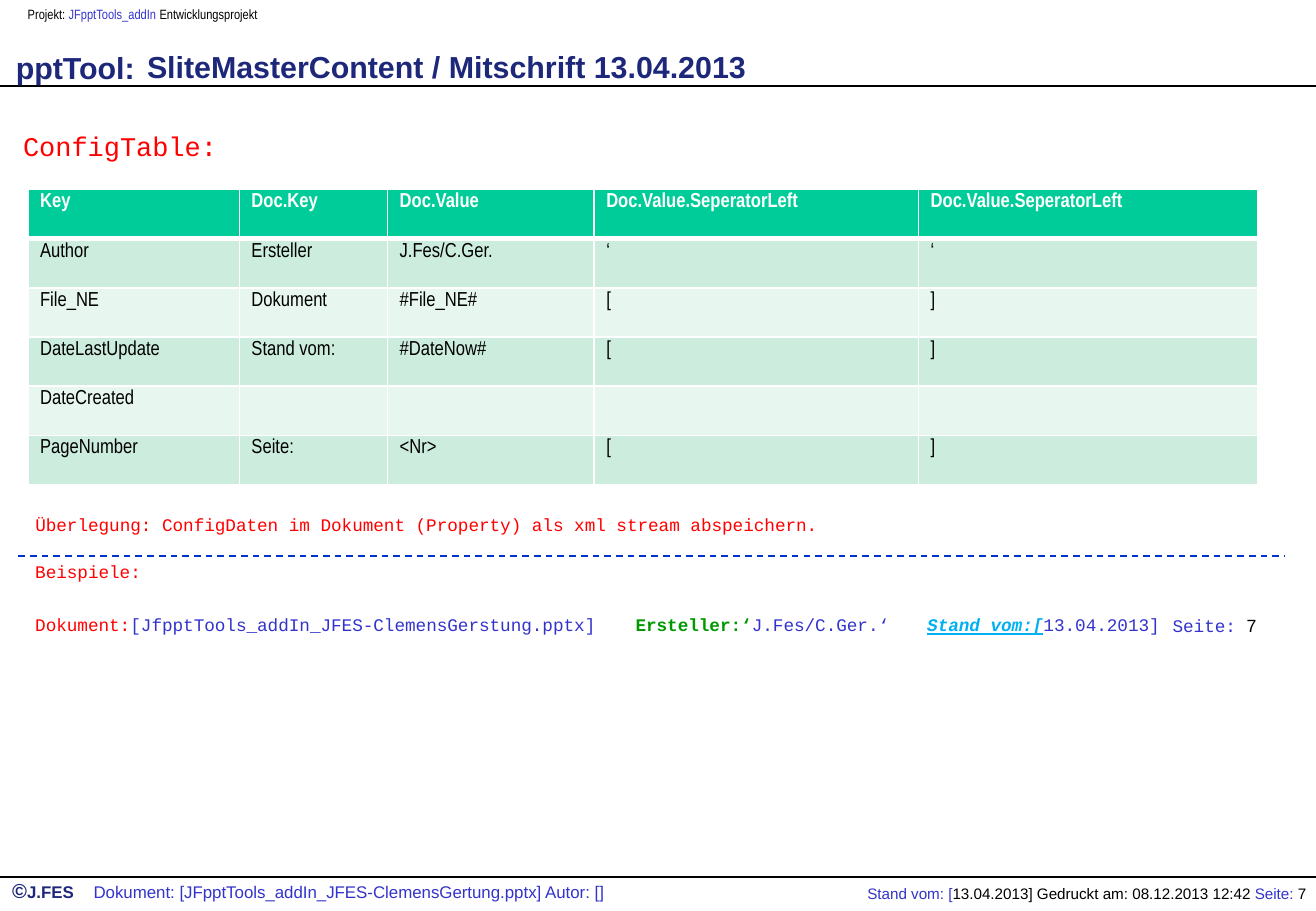
from lxml import etree
from pptx import Presentation
from pptx.dml.color import RGBColor
from pptx.enum.dml import MSO_LINE
from pptx.enum.shapes import MSO_CONNECTOR
from pptx.enum.text import PP_ALIGN
from pptx.oxml.ns import qn
from pptx.util import Inches, Pt

STRAIGHT = MSO_CONNECTOR.STRAIGHT
DASH = MSO_LINE.DASH
LEFT, RIGHT = PP_ALIGN.LEFT, PP_ALIGN.RIGHT

NAVY, BLUE, RED, GREEN, CYAN = "1D287A", "3333CC", "FF0000", "009900", "00B0F0"
BLACK, WHITE, DASH_BLUE = "000000", "FFFFFF", "0033CC"
HEADER_FILL, BAND_FILLS = "00CC99", ("CCECDE", "E7F6EF")

# Content: each span is (text, colour, optional format changes)
HEADINGS = [
    ((0.13, 0.22, 1.15, 0.43), "pptTool:"),
    ((1.21, 0.21, 9.49, 0.49), "SliteMasterContent / Mitschrift 13.04.2013"),
]
PROJECT = [("Projekt: ", BLACK), ("JFpptTools_addIn ", BLUE), ("Entwicklungsprojekt", BLACK)]
OWNER = [("©", NAVY, {"size": 12}), ("J.FES", NAVY)]
DOCUMENT = [("Dokument: [JFpptTools_addIn_JFES-ClemensGertung.pptx] Autor: []", BLUE)]
STATUS = [
    ("Stand vom: [", BLUE),
    ("13.04.2013] Gedruckt am: 08.12.2013 12:42 ", BLACK),
    ("Seite: ", BLUE),
    ("7", BLACK),
]
TABLE_TITLE = [("ConfigTable:", RED)]
NOTES = [
    ((0.25, 4.19, 7.99, 0.26),
     [("Überlegung: ConfigDaten im Dokument (Property) als xml stream abspeichern.", RED)]),
    ((0.25, 4.58, 4.84, 0.26), [("Beispiele:", RED)]),
    ((0.25, 5.01, 4.84, 0.26),
     [("Dokument:", RED), ("[JfpptTools_addIn_JFES-ClemensGerstung.pptx]", BLUE)]),
    ((5.19, 5.01, 2.47, 0.26),
     [("Ersteller:‘", GREEN, {"bold": True}), ("J.Fes/C.Ger.‘", BLUE)]),
    ((7.59, 5.01, 2.02, 0.26),
     [("Stand vom:[", CYAN, {"bold": True, "italic": True, "underline": True}),
      ("13.04.2013]", BLUE)]),
    ((9.61, 5.02, 0.96, 0.26), [("Seite: ", BLUE), ("7", BLACK, {"name": "Arial"})]),
]
CONFIG_ROWS = [
    ("Key", "Doc.Key", "Doc.Value", "Doc.Value.SeperatorLeft", "Doc.Value.SeperatorLeft"),
    ("Author", "Ersteller", "J.Fes/C.Ger.", "‘", "‘"),
    ("File_NE", "Dokument", "#File_NE#", "[", "]"),
    ("DateLastUpdate", "Stand vom:", "#DateNow#", "[", "]"),
    ("DateCreated", "", "", "", ""),
    ("PageNumber", "Seite:", "<Nr>", "[", "]"),
]
COLUMN_WIDTHS = (1.74, 1.22, 1.7, 2.67, 2.79)
TABLE_LEFT, TABLE_TOP, TABLE_HEIGHT = 0.23, 1.56, 2.43
LINES = [  # left, right, y, colour, dash
    (0, 10.83, 0.71, BLACK, None),
    (0, 10.83, 7.22, BLACK, None),
    (0.15, 10.57, 4.58, DASH_BLUE, DASH),
]


def colour(value):
    return RGBColor.from_string(value)


def write_spans(para, spans, **base):
    for text, tint, *changes in spans:
        span = para.add_run()
        span.text = text
        look = {**base, **(changes[0] if changes else {})}
        span.font.color.rgb = colour(tint)
        span.font.size = Pt(look.pop("size"))
        for attribute, value in look.items():
            setattr(span.font, attribute, value)


def add_text(page, place, spans, inset=(0, 0), align=LEFT, spacing=None, **look):
    frame = page.shapes.add_textbox(*map(Inches, place)).text_frame
    frame.word_wrap = True
    frame.margin_left = frame.margin_right = Inches(inset[0])
    frame.margin_top = frame.margin_bottom = Inches(inset[1])
    para = frame.paragraphs[0]
    para.alignment = align
    if spacing:
        para.line_spacing = Pt(spacing)
    write_spans(para, spans, **look)


def add_line(page, left, right, y, tint, dash):
    line = page.shapes.add_connector(STRAIGHT, Inches(left), Inches(y), Inches(right), Inches(y))
    line.line.color.rgb = colour(tint)
    line.line.width = Pt(1)
    if dash:
        line.line.dash_style = dash
    etree.SubElement(line._element.spPr, qn("a:effectLst"))


def add_borders(cell, tint, widths):
    properties = cell._tc.get_or_add_tcPr()
    for position, (side, width) in enumerate(widths.items()):
        border = etree.Element(qn("a:" + side), w=str(Pt(width)))
        fill = etree.SubElement(border, qn("a:solidFill"))
        etree.SubElement(fill, qn("a:srgbClr"), val=tint)
        properties.insert(position, border)


def add_config_table(page):
    table = page.shapes.add_table(
        len(CONFIG_ROWS), len(COLUMN_WIDTHS), Inches(TABLE_LEFT), Inches(TABLE_TOP),
        Inches(sum(COLUMN_WIDTHS)), Inches(TABLE_HEIGHT)).table
    table.horz_banding = False
    for column, width in zip(table.columns, COLUMN_WIDTHS):
        column.width = Inches(width)
    for row, texts in enumerate(CONFIG_ROWS):
        header = row == 0
        fill = HEADER_FILL if header else BAND_FILLS[(row - 1) % 2]
        for column, text in enumerate(texts):
            cell = table.cell(row, column)
            cell.margin_top = cell.margin_bottom = Inches(0.03)
            cell.fill.solid()
            cell.fill.fore_color.rgb = colour(fill)
            add_borders(cell, WHITE, {"lnL": 1, "lnR": 1, "lnT": 3 if row == 1 else 1,
                                      "lnB": 3 if header else 1})
            if text:
                write_spans(cell.text_frame.paragraphs[0],
                            [(text, WHITE if header else BLACK)],
                            size=12, name="Arial Narrow", bold=header)


def main():
    deck = Presentation()
    deck.slide_width, deck.slide_height = Inches(10.83), Inches(7.5)
    page = deck.slides.add_slide(deck.slide_layouts[6])

    # Rules and dashed divider
    for line in LINES:
        add_line(page, *line)

    # Header
    add_text(page, (0.13, 0, 5.42, 0.24), PROJECT, inset=(0.1, 0.05),
             size=8, name="Arial Narrow")
    for place, text in HEADINGS:
        add_text(page, place, [(text, NAVY)], spacing=35, size=18, name="Arial", bold=True)

    # Configuration table and notes
    add_text(page, (0.15, 1.03, 7.99, 0.35), TABLE_TITLE, inset=(0.04, 0.04),
             size=16, name="Courier New")
    add_config_table(page)
    for place, spans in NOTES:
        add_text(page, place, spans, inset=(0.04, 0.04), size=10.5, name="Courier New")

    # Footer
    add_text(page, (0.1, 7.23, 0.6, 0.2), OWNER, size=10, name="Arial", bold=True)
    add_text(page, (0.77, 7.26, 4.84, 0.17), DOCUMENT, size=10, name="Arial")
    add_text(page, (1.5, 7.28, 9.25, 0.15), STATUS, align=RIGHT, size=9, name="Arial")

    deck.save("out.pptx")


if __name__ == "__main__":
    main()
